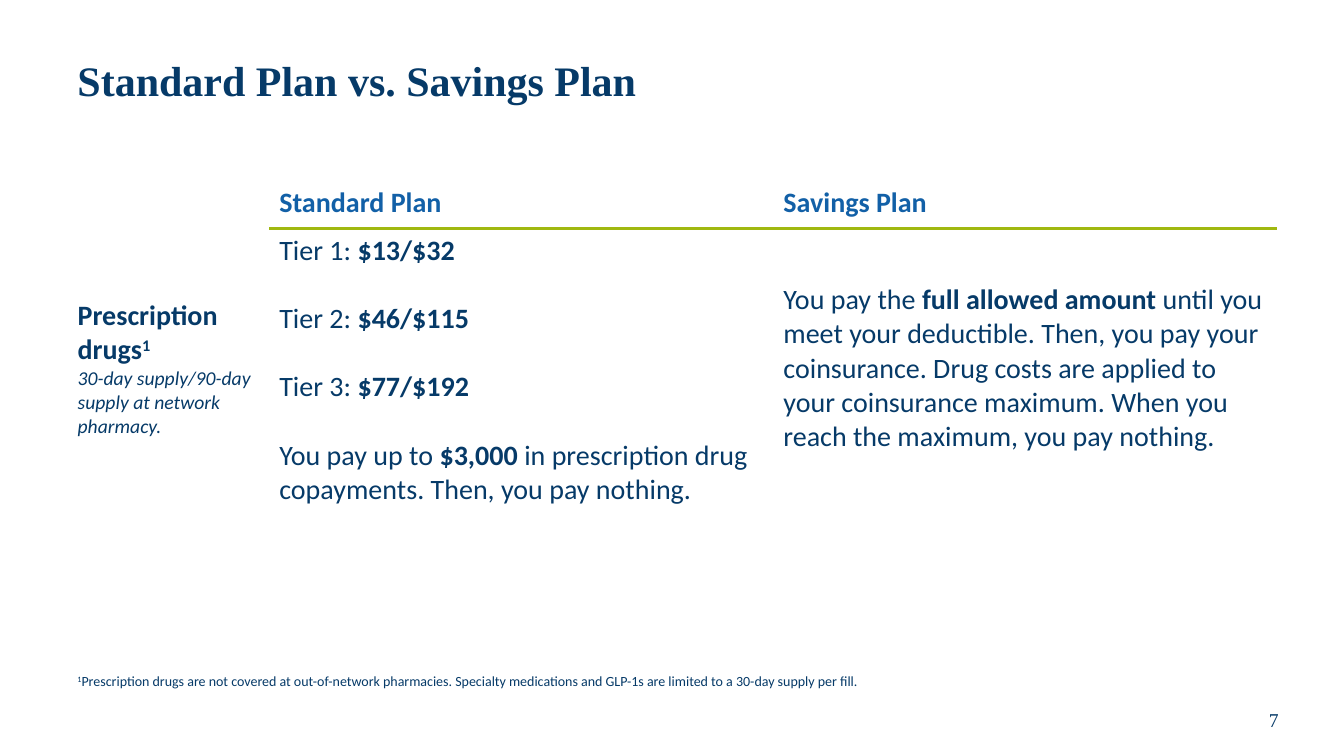
"""Build the prescription drug comparison slide."""
import dataclasses

import lxml.etree
import pptx
import pptx.dml.color
import pptx.enum.text
import pptx.oxml.ns
import pptx.slide
import pptx.table
import pptx.text.text
import pptx.util

SLIDE_WIDTH, SLIDE_HEIGHT = 13.33, 7.5
MARGIN = 0.67
COLUMN = 1.0
NAVY, BLUE, GREEN = "063A68", "1260A7", "A0B810"
SERIF, SANS = "Times New Roman", "Calibri"
NO_TABLE_STYLE = "{2D5ABB26-0587-4C30-8999-92F81FD0307C}"
MIDDLE = pptx.enum.text.MSO_ANCHOR.MIDDLE
TOP = pptx.enum.text.MSO_ANCHOR.TOP
LEFT = pptx.enum.text.PP_ALIGN.LEFT
CENTER = pptx.enum.text.PP_ALIGN.CENTER


@dataclasses.dataclass(frozen=True)
class Run:
    """A piece of text with its character format."""
    text: str
    size: float = 20
    bold: bool = False
    italic: bool = False
    superscript: bool = False
    color: str = NAVY
    font: str = SANS


@dataclasses.dataclass(frozen=True)
class Label:
    """A text box placed by grid column and by share of the slide's height."""
    column: float
    columns: float
    top: float
    height: float
    runs: list[Run]
    anchor: pptx.enum.text.MSO_ANCHOR = MIDDLE
    align: pptx.enum.text.PP_ALIGN = LEFT
    line_spacing: float = 1.0


@dataclasses.dataclass(frozen=True)
class Cell:
    """A table cell with its paragraphs, paragraph gap and ruled side."""
    paragraphs: list[list[Run]]
    gap: float = 0
    rule: str = ""


LABELS = [
    Label(11.38, 1.17, 0.919, 0.067, [Run("7", size=14, font=SERIF)], align=CENTER),
    Label(0, 12, 0.033, 0.153,
          [Run("Standard Plan vs. Savings Plan", size=30, bold=True, font=SERIF)],
          line_spacing=0.9),
    Label(0, 12, 0.883, 0.036, [
        Run("1", size=10, superscript=True),
        Run("Prescription drugs are not covered at out-of-network pharmacies. "
            "Specialty medications and GLP-1s are limited to a 30-day supply per fill.",
            size=10)], anchor=TOP),
]

TIERS = [("Tier 1: ", "$13/$32"), ("Tier 2: ", "$46/$115"), ("Tier 3: ", "$77/$192")]
TABLE_TOP = 0.235
TABLE_COLUMNS = [2, 5, 5]
TABLE_ROWS = [0.067, 0.369]
CELLS = [
    [Cell([])] + [Cell([[Run(plan, bold=True, color=BLUE)]], rule="a:lnB")
                  for plan in ("Standard Plan", "Savings Plan")],
    [
        Cell([[Run("Prescription drugs", bold=True),
               Run("1", bold=True, superscript=True)],
              [Run("30-day supply/90-day supply at network pharmacy.",
                   size=14, italic=True)]]),
        Cell([[Run(tier), Run(price, bold=True)] for tier, price in TIERS]
             + [[Run("You pay up to "), Run("$3,000 ", bold=True),
                 Run("in prescription drug copayments. Then, you pay nothing.")]],
             gap=24.4, rule="a:lnT"),
        Cell([[Run("You pay the "), Run("full allowed amount ", bold=True),
               Run("until you meet your deductible. Then, you pay your coinsurance. "
                   "Drug costs are applied to your coinsurance maximum. "
                   "When you reach the maximum, you pay nothing.")]], rule="a:lnT"),
    ],
]


def rgb(color: str) -> pptx.dml.color.RGBColor:
    """Turn a hex string into a colour."""
    return pptx.dml.color.RGBColor.from_string(color)


def across(columns: float) -> int:
    """Give the width of a number of grid columns."""
    return pptx.util.Inches(columns * COLUMN)


def down(share: float) -> int:
    """Give the length of a share of the slide's height."""
    return pptx.util.Inches(share * SLIDE_HEIGHT)


def add_text(paragraph: pptx.text.text._Paragraph, text: str, *, size: float,
             bold: bool, italic: bool, superscript: bool, color: str, font: str) -> None:
    """Add one formatted run to a paragraph."""
    run = paragraph.add_run()
    run.text = text
    run.font.size = pptx.util.Pt(size)
    run.font.bold = bold
    run.font.italic = italic
    run.font.name = font
    run.font.color.rgb = rgb(color)
    if superscript:
        run._r.get_or_add_rPr().set("baseline", "30000")


def fill_frame(frame: pptx.text.text.TextFrame, paragraphs: list[list[Run]], *,
               gap: float = 0, align: pptx.enum.text.PP_ALIGN = LEFT,
               line_spacing: float = 1.0) -> None:
    """Write paragraphs into a text frame with an equal gap between them."""
    for index, runs in enumerate(paragraphs):
        paragraph = frame.add_paragraph() if index else frame.paragraphs[0]
        paragraph.alignment = align
        paragraph.line_spacing = line_spacing
        paragraph.space_before = pptx.util.Pt(gap if index else 0)
        for run in runs:
            add_text(paragraph, **dataclasses.asdict(run))


def add_label(slide: pptx.slide.Slide, label: Label) -> None:
    """Add a text box for a label."""
    left = pptx.util.Inches(MARGIN) + across(label.column)
    box = slide.shapes.add_textbox(left, down(label.top), across(label.columns),
                                   down(label.height))
    frame = box.text_frame
    frame.word_wrap = True
    frame.vertical_anchor = label.anchor
    fill_frame(frame, [label.runs], align=label.align, line_spacing=label.line_spacing)


def rule_cell(cell: pptx.table._Cell, side: str) -> None:
    """Draw the green rule on one side of a cell."""
    qualify = pptx.oxml.ns.qn
    line = lxml.etree.Element(qualify(side))
    line.set("w", str(int(pptx.util.Pt(2.25))))
    fill = lxml.etree.SubElement(line, qualify("a:solidFill"))
    lxml.etree.SubElement(fill, qualify("a:srgbClr")).set("val", GREEN)
    cell._tc.get_or_add_tcPr().insert(0, line)


def add_plan_table(slide: pptx.slide.Slide) -> None:
    """Add the table that compares the two plans."""
    frame = slide.shapes.add_table(
        len(TABLE_ROWS), len(TABLE_COLUMNS), pptx.util.Inches(MARGIN), down(TABLE_TOP),
        across(sum(TABLE_COLUMNS)), down(sum(TABLE_ROWS)))
    table = frame.table
    table.first_row = False
    table.horz_banding = False
    table._tbl.tblPr.find(pptx.oxml.ns.qn("a:tableStyleId")).text = NO_TABLE_STYLE
    for column, width in zip(table.columns, TABLE_COLUMNS):
        column.width = across(width)
    for row, height, contents in zip(table.rows, TABLE_ROWS, CELLS):
        row.height = down(height)
        for cell, content in zip(row.cells, contents):
            cell.fill.background()
            cell.vertical_anchor = MIDDLE
            fill_frame(cell.text_frame, content.paragraphs, gap=content.gap)
            if content.rule:
                rule_cell(cell, content.rule)


def main() -> None:
    """Build and save the presentation."""
    presentation = pptx.Presentation()
    presentation.slide_width = pptx.util.Inches(SLIDE_WIDTH)
    presentation.slide_height = pptx.util.Inches(SLIDE_HEIGHT)
    slide = presentation.slides.add_slide(presentation.slide_layouts[6])
    for label in LABELS:
        add_label(slide, label)
    add_plan_table(slide)
    presentation.save("out.pptx")


if __name__ == "__main__":
    main()
